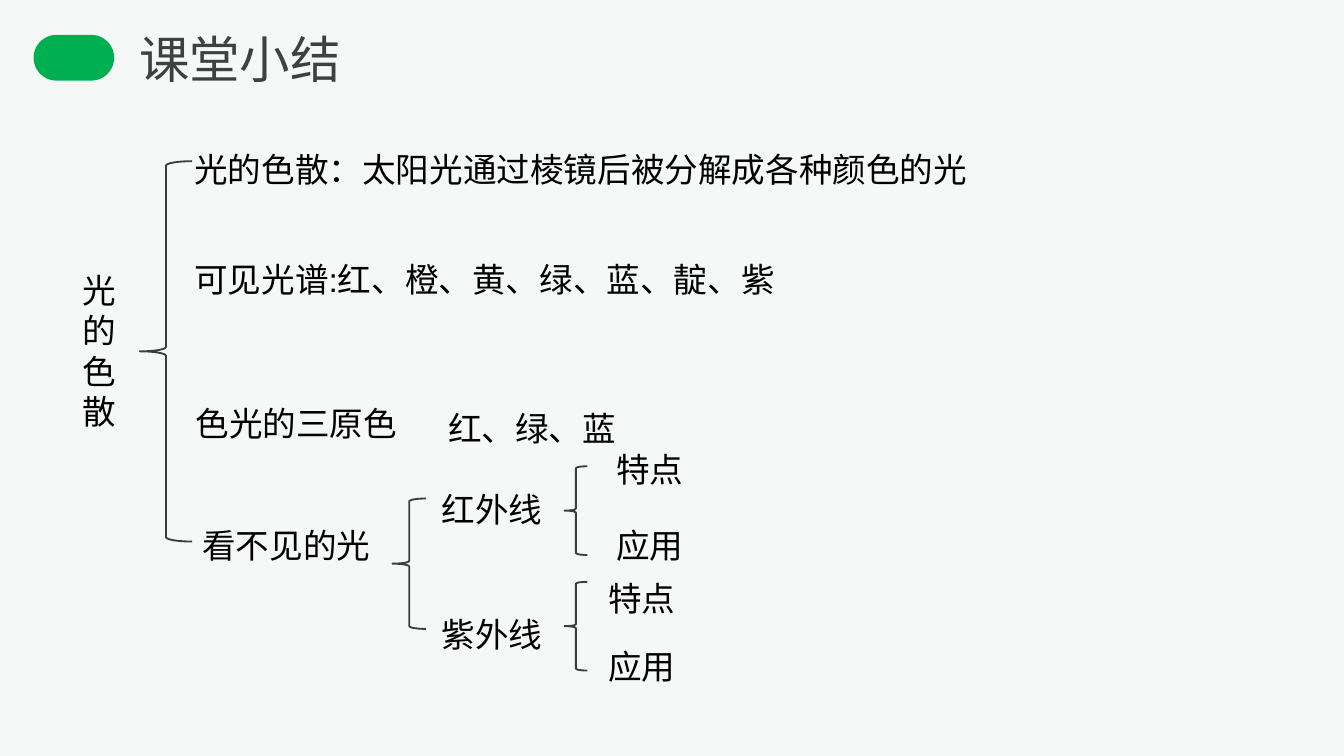
from collections import namedtuple

from pptx import Presentation
from pptx import util as u
from pptx.dml.color import RGBColor
from pptx.enum import shapes, text

COLORS = {"background": "F6F8F8", "marker": "00B050", "title": "404040",
          "body": "000000", "brace": "3D3D3D"}
FONT = "Arial"
CELL = u.Inches(0.1)  # grid of 100 columns; rows are as high as columns are wide
COLUMNS, ROWS = 100, 56.25  # 16:9
TEXT_ROWS = 3.8  # height of one line of body text

Box = namedtuple("Box", "left top width height")


def color(name):
    return RGBColor.from_string(COLORS[name])


def emu(box):
    return [round(length * CELL) for length in box]


def inside(box, left, top, width, height):
    """Box offset from the corner of another box."""
    return Box(box.left + left, box.top + top, width, height)


def write(shape, content, size, color_name):
    frame = shape.text_frame
    frame.text = content
    frame.word_wrap = True
    frame.auto_size = text.MSO_AUTO_SIZE.SHAPE_TO_FIT_TEXT
    frame.vertical_anchor = text.MSO_ANCHOR.TOP
    frame.margin_left = frame.margin_right = u.Pt(5.4)
    frame.margin_top = frame.margin_bottom = u.Pt(2.7)
    paragraph = frame.paragraphs[0]
    paragraph.alignment = text.PP_ALIGN.LEFT
    paragraph.line_spacing = 1.0
    paragraph.space_before = u.Pt(0)
    font = paragraph.runs[0].font
    font.name, font.size = FONT, u.Pt(size)
    font.color.rgb = color(color_name)


def add_label(slide, box, content):
    write(slide.shapes.add_textbox(*emu(box)), content, 18, "body")


def add_brace(slide, box):
    brace = slide.shapes.add_shape(shapes.MSO_SHAPE.LEFT_BRACE, *emu(box))
    brace.shadow.inherit = False
    brace.fill.background()
    brace.line.color.rgb = color("brace")
    brace.line.width = u.Pt(1)


def add_header(slide, box):
    # Green marker
    marker = slide.shapes.add_shape(shapes.MSO_SHAPE.ROUNDED_RECTANGLE,
                                    *emu(inside(box, 2.5, 2.6, 6, 3.4)))
    marker.adjustments[0] = 0.5
    marker.shadow.inherit = False
    marker.fill.solid()
    marker.fill.fore_color.rgb = color("marker")
    marker.line.fill.background()
    # Title
    title = slide.shapes.title
    title.left, title.top, title.width, title.height = emu(
        inside(box, 9.6, 1.7, 32.6, 5.3))
    write(title, "课堂小结", 27, "title")


def add_topics(slide, box):
    """Root of the tree, its brace and the four topics."""
    add_label(slide, inside(box, 0, 9, 5, 12.9), "光的色散")
    add_brace(slide, inside(box, 5, 1.3, 3.9, 28.3))
    topics = [
        (8.3, 0, 78.9, "光的色散：太阳光通过棱镜后被分解成各种颜色的光"),
        (8.3, 8.2, 62.9, "可见光谱:红、橙、黄、绿、蓝、靛、紫"),
        (8.4, 18.9, 22.4, "色光的三原色"),
        (27.2, 19.3, 22.4, "红、绿、蓝"),
        (8.9, 28, 19.5, "看不见的光"),
    ]
    for left, top, width, content in topics:
        add_label(slide, inside(box, left, top, width, TEXT_ROWS), content)


def add_ray(slide, box, name, name_top, leaf_left, leaf_tops):
    """One kind of invisible light with its two leaves."""
    add_label(slide, inside(box, 0, name_top, 13.4, TEXT_ROWS), name)
    add_brace(slide, inside(box, 9.9, 0, 1.7, box.height))
    for top, content in zip(leaf_tops, ("特点", "应用")):
        add_label(slide, inside(box, leaf_left, top, 10, TEXT_ROWS), content)


def add_invisible_light(slide, box):
    add_brace(slide, inside(box, 0, 2.4, 2.5, 9.7))
    add_ray(slide, inside(box, 2.9, 0, 23, 6.6), "红外线", 1.3, 13, (-1.7, 4))
    add_ray(slide, inside(box, 2.9, 8.6, 23, 6.6), "紫外线", 2, 12.4, (-0.7, 4.4))


def main():
    presentation = Presentation()
    presentation.slide_width = round(COLUMNS * CELL)
    presentation.slide_height = round(ROWS * CELL)
    slide = presentation.slides.add_slide(presentation.slide_layouts[5])
    slide.background.fill.solid()
    slide.background.fill.fore_color.rgb = color("background")

    add_header(slide, Box(0, 0, COLUMNS, 8))
    add_topics(slide, Box(5.4, 10.7, 87.2, 31.8))
    add_invisible_light(slide, Box(29.2, 34.7, 26, 16.8))
    presentation.save("out.pptx")


if __name__ == "__main__":
    main()
